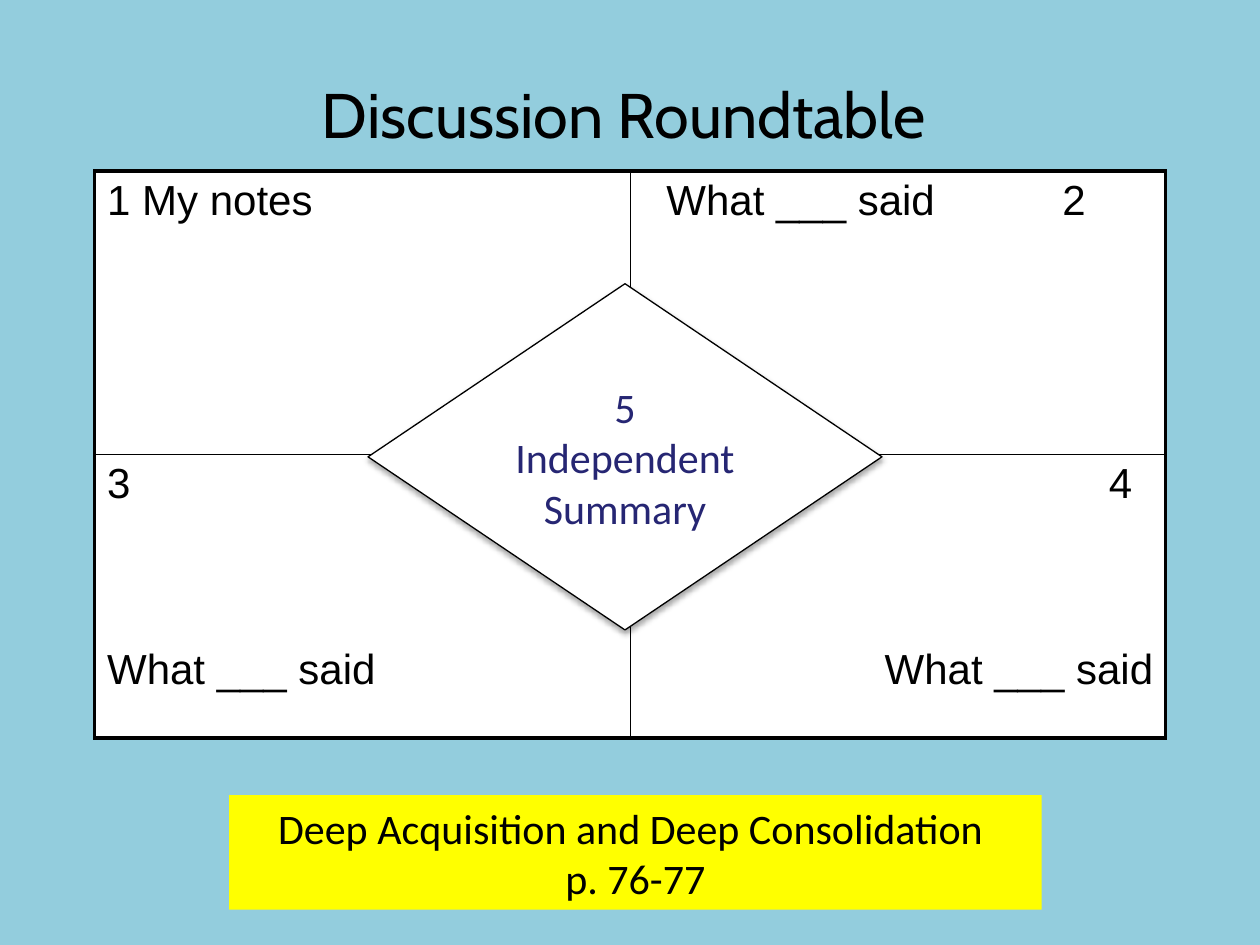
from dataclasses import dataclass

from lxml.etree import SubElement
from pptx import Presentation
from pptx.dml.color import RGBColor
from pptx.enum.shapes import MSO_SHAPE
from pptx.enum.text import MSO_ANCHOR, PP_ALIGN
from pptx.oxml import parse_xml
from pptx.oxml.ns import nsdecls, qn
from pptx.util import Cm, Pt


@dataclass(frozen=True)
class Theme:
    background: str = "93CDDD"
    paper: str = "FFFFFF"
    ink: str = "000000"
    accent: str = "262673"
    highlight: str = "FFFF00"
    title_size: float = 36
    body_size: float = 24
    outer_border: float = 2.25
    inner_border: float = 1
    outline: float = 0.75


THEME = Theme()
TITLE = dict(name="Cabin", size=Pt(THEME.title_size), color=THEME.ink)
NOTE = dict(name="Arial", size=Pt(THEME.body_size), color=THEME.ink)
LABEL = dict(name="Calibri", size=Pt(THEME.body_size), color=THEME.ink)
SUMMARY = {**LABEL, "color": THEME.accent}

LEFT, CENTER, RIGHT = PP_ALIGN.LEFT, PP_ALIGN.CENTER, PP_ALIGN.RIGHT
CAPTION_GAP = Pt(79)
SAID = "What ___ said"

# Each quadrant: left margin, tab stop, lines as (text, alignment)
QUADRANTS = [
    [(Cm(0.25), None, [("1 My notes", LEFT)]),
     (Cm(0.73), Cm(7.98), [(f"{SAID}\t2", LEFT)])],
    [(Cm(0.25), None, [("3", LEFT), (SAID, LEFT)]),
     (Cm(0.25), Cm(9.4), [("\t4", LEFT), (SAID, RIGHT)])],
]


def paint(fill, color):
    fill.solid()
    fill.fore_color.rgb = RGBColor.from_string(color)


def write_lines(tf, lines, style, gap=Pt(0)):
    """Write (text, alignment) lines, with a gap before each line after the first."""
    for i, (text, alignment) in enumerate(lines):
        p = tf.add_paragraph() if i else tf.paragraphs[0]
        p.alignment = alignment
        p.space_before = gap if i else Pt(0)
        r = p.add_run()
        r.text = text
        for key, value in style.items():
            if key == "color":
                r.font.color.rgb = RGBColor.from_string(value)
            else:
                setattr(r.font, key, value)


def add_title(s, text):
    sp = s.shapes.title
    sp.left, sp.top, sp.width, sp.height = Cm(1.78), Cm(1.24), Cm(21.59), Cm(2.08)
    sp.text_frame.vertical_anchor = MSO_ANCHOR.MIDDLE
    write_lines(sp.text_frame, [(text, CENTER)], TITLE)


def set_borders(cell, row, col):
    """Draw thick lines on the table's outer edge and thin ones inside."""
    outer = {"L": col == 0, "R": col == 1, "T": row == 0, "B": row == 1}
    for side, is_outer in outer.items():
        width = Pt(THEME.outer_border if is_outer else THEME.inner_border)
        ln = SubElement(cell._tc.get_or_add_tcPr(), qn(f"a:ln{side}"), w=str(width))
        SubElement(SubElement(ln, qn("a:solidFill")), qn("a:srgbClr"), val=THEME.ink)


def add_tab_stop(p, position):
    tabs = SubElement(p._p.get_or_add_pPr(), qn("a:tabLst"))
    SubElement(tabs, qn("a:tab"), pos=str(position), algn="l")


def add_quadrants(s):
    table = s.shapes.add_table(2, 2, Cm(1.91), Cm(3.45), Cm(21.59), Cm(11.43)).table
    table.first_row = table.horz_banding = False
    for row, quadrants in enumerate(QUADRANTS):
        for col, (margin, tab, lines) in enumerate(quadrants):
            cell = table.cell(row, col)
            set_borders(cell, row, col)
            paint(cell.fill, THEME.paper)
            cell.margin_left = margin
            write_lines(cell.text_frame, lines, NOTE, CAPTION_GAP)
            if tab:
                add_tab_stop(cell.text_frame.paragraphs[0], tab)


def add_block(s, kind, box, color, lines, style):
    sp = s.shapes.add_shape(kind, *map(Cm, box))
    sp.shadow.inherit = False
    paint(sp.fill, color)
    sp.line.fill.background()
    tf = sp.text_frame
    tf.word_wrap = True
    tf.vertical_anchor = MSO_ANCHOR.MIDDLE
    write_lines(tf, [(line, CENTER) for line in lines], style)
    return sp


def add_soft_shadow(sp):
    effects = sp._element.spPr.find(qn("a:effectLst"))
    effects.append(parse_xml(
        f'<a:outerShdw {nsdecls("a")} blurRad="{Pt(3.1)}" dist="{Pt(1.8)}" '
        f'dir="5400000" rotWithShape="0"><a:srgbClr val="{THEME.ink}">'
        '<a:alpha val="35000"/></a:srgbClr></a:outerShdw>'))


def main():
    prs = Presentation()
    prs.slide_width, prs.slide_height = Cm(25.4), Cm(19.05)
    s = prs.slides.add_slide(prs.slide_layouts[5])
    paint(s.background.fill, THEME.background)

    add_title(s, "Discussion Roundtable")
    add_quadrants(s)
    diamond = add_block(s, MSO_SHAPE.DIAMOND, (7.42, 5.72, 10.36, 6.98), THEME.paper,
                        ["5", "Independent", "Summary"], SUMMARY)
    paint(diamond.line.fill, THEME.ink)
    diamond.line.width = Pt(THEME.outline)
    add_soft_shadow(diamond)
    add_block(s, MSO_SHAPE.RECTANGLE, (4.62, 16.03, 16.38, 2.31), THEME.highlight,
              ["Deep Acquisition and Deep Consolidation ", "p. 76-77"], LABEL)

    prs.save("out.pptx")


if __name__ == "__main__":
    main()
